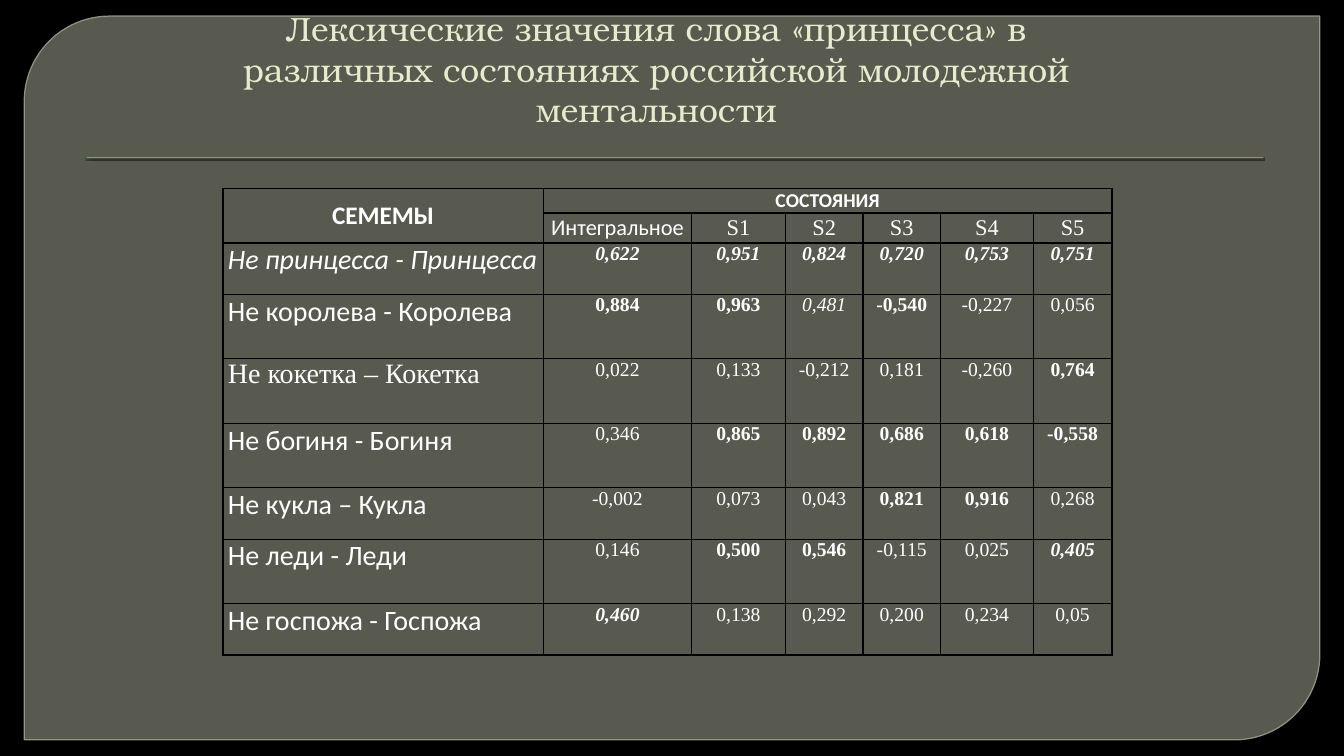
"""Build the slide with the table of meanings of the word «принцесса»."""
from lxml import etree
from pptx import Presentation
from pptx.dml.color import RGBColor
from pptx.enum.shapes import MSO_SHAPE
from pptx.enum.text import MSO_ANCHOR as ANCHOR, PP_ALIGN as ALIGN
from pptx.oxml import parse_xml
from pptx.oxml.ns import nsdecls, qn
from pptx.util import Inches, Pt

TITLE = "Лексические значения слова «принцесса» в различных состояниях российской молодежной ментальности"
CORNER, GROUP = "СЕМЕМЫ", "СОСТОЯНИЯ"
STATES = ["Интегральное", "S1", "S2", "S3", "S4", "S5"]
SANS, SERIF, DISPLAY = "Calibri", "Times New Roman", "TeX Gyre Bonum"
ROWS = [
    ("Не принцесса - Принцесса", dict(italic=True),
     ["0,622 bi", "0,951 bi", "0,824 bi", "0,720 bi", "0,753 bi", "0,751 bi"]),
    ("Не королева - Королева", {},
     ["0,884 b", "0,963 b", "0,481 i", "-0,540 b", "-0,227", "0,056"]),
    ("Не кокетка – Кокетка", dict(font=SERIF),
     ["0,022", "0,133", "-0,212", "0,181", "-0,260", "0,764 b"]),
    ("Не богиня - Богиня", dict(align=ALIGN.JUSTIFY),
     ["0,346", "0,865 b", "0,892 b", "0,686 b", "0,618 b", "-0,558 b"]),
    ("Не кукла – Кукла", dict(align=ALIGN.JUSTIFY),
     ["-0,002", "0,073", "0,043", "0,821 b", "0,916 b", "0,268"]),
    ("Не леди - Леди", dict(align=ALIGN.JUSTIFY),
     ["0,146", "0,500 b", "0,546 b", "-0,115", "0,025", "0,405 bi"]),
    ("Не госпожа - Госпожа", dict(align=ALIGN.JUSTIFY),
     ["0,460 bi", "0,138", "0,292", "0,200", "0,234", "0,05"]),
]
COL_WIDTHS = [3.18, 1.47, 0.93, 0.77, 0.77, 0.92, 0.78]
ROW_HEIGHTS = [0.24, 0.3, 0.51, 0.64, 0.64, 0.64, 0.51, 0.64, 0.51]
COLORS = {"back": "000000", "panel": "888B7B", "edge": "9DA090", "rule": "72A376",
          "title": "E7EACB", "text": "FFFFFF", "grid": "000000"}


def rgb(name):
    return RGBColor.from_string(COLORS[name])


def write(tf, text, size=14, font=SANS, color="text", bold=False, italic=False, align=ALIGN.CENTER):
    p = tf.paragraphs[0]
    p.alignment = align
    r = p.add_run()
    r.text = text
    f = r.font
    f.size, f.name, f.bold, f.italic = Pt(size), font, bold, italic
    f.color.rgb = rgb(color)
    return p


def set_alpha(fill, percent):
    clr = fill._xPr.find(qn("a:solidFill"))[0]
    etree.SubElement(clr, qn("a:alpha")).set("val", str(percent * 1000))


def add_panel(s):
    sp = s.shapes.add_shape(MSO_SHAPE.ROUND_2_DIAG_RECTANGLE,
                            Inches(0.24), Inches(0.16), Inches(12.85), Inches(7.18))
    sp.shadow.inherit = False
    sp.adjustments[0], sp.adjustments[1] = 0.118, 0
    sp.fill.solid()
    sp.fill.fore_color.rgb = rgb("panel")
    set_alpha(sp.fill, 65)
    sp.line.width = Pt(0.87)
    sp.line.color.rgb = rgb("edge")
    set_alpha(sp.line.fill, 88)


def add_rule(s):
    sp = s.shapes.add_shape(MSO_SHAPE.RECTANGLE, Inches(0.86), Inches(1.56), Inches(11.67), Inches(0.01))
    sp.fill.solid()
    sp.fill.fore_color.rgb = rgb("rule")
    sp.line.fill.background()
    sp._element.spPr.append(parse_xml(
        f'<a:effectLst {nsdecls("a")}><a:outerShdw blurRad="{Pt(1)}" dist="{Pt(1)}" dir="5400000">'
        f'<a:srgbClr val="{COLORS["back"]}"><a:alpha val="75000"/></a:srgbClr>'
        '</a:outerShdw></a:effectLst>'))


def add_title(s):
    tf = s.shapes.add_textbox(Inches(1.98), Inches(0.39), Inches(9), Inches(0.94)).text_frame
    tf.word_wrap = True
    tf.vertical_anchor = ANCHOR.BOTTOM
    p = write(tf, TITLE, size=24, font=DISPLAY, color="title")
    pPr = p._p.get_or_add_pPr()
    pPr.set("marL", str(Inches(0.06)))
    pPr.set("indent", "0")


def set_borders(cell, row, col):
    under_group = col > 0
    thick = {
        "L": col == 0,
        "R": col == len(COL_WIDTHS) - 1 or (row == 0 and under_group),
        "T": row == 0 or (row == 1 and under_group),
        "B": row == len(ROW_HEIGHTS) - 1 or (row == 0 and under_group),
    }
    tcPr = cell._tc.get_or_add_tcPr()
    for side, heavy in thick.items():
        tcPr.append(parse_xml(
            f'<a:ln{side} {nsdecls("a")} w="{Pt(1.5 if heavy else 1)}"><a:solidFill>'
            f'<a:srgbClr val="{COLORS["grid"]}"/></a:solidFill><a:prstDash val="solid"/></a:ln{side}>'))


def add_values(s):
    table = s.shapes.add_table(len(ROW_HEIGHTS), len(COL_WIDTHS), Inches(2.21), Inches(1.87),
                               Inches(sum(COL_WIDTHS)), Inches(sum(ROW_HEIGHTS))).table
    table.first_row = table.horz_banding = False
    for column, width in zip(table.columns, COL_WIDTHS):
        column.width = Inches(width)
    for i, height in enumerate(ROW_HEIGHTS):
        table.rows[i].height = Inches(height)
        for j in range(len(COL_WIDTHS)):
            cell = table.cell(i, j)
            cell.margin_left = cell.margin_right = Inches(0.05)
            cell.margin_top = cell.margin_bottom = 0
            cell.vertical_anchor = ANCHOR.MIDDLE if i < 2 else ANCHOR.TOP
            set_borders(cell, i, j)
            cell.fill.background()
    table.cell(0, 0).merge(table.cell(1, 0))
    table.cell(0, 1).merge(table.cell(0, len(STATES)))
    write(table.cell(0, 0).text_frame, CORNER, size=18, bold=True)
    write(table.cell(0, 1).text_frame, GROUP, bold=True)
    for j, state in enumerate(STATES, 1):
        write(table.cell(1, j).text_frame, state, size=16, font=SANS if j == 1 else SERIF)
    for i, (sememe, style, values) in enumerate(ROWS, 2):
        write(table.cell(i, 0).text_frame, sememe, **{"size": 20, "align": ALIGN.LEFT, **style})
        for j, value in enumerate(values, 1):
            number, _, marks = value.partition(" ")
            write(table.cell(i, j).text_frame, number, font=SERIF, bold="b" in marks, italic="i" in marks)


def main():
    prs = Presentation()
    prs.slide_width, prs.slide_height = Inches(13.33), Inches(7.5)
    s = prs.slides.add_slide(prs.slide_layouts[6])
    s.background.fill.solid()
    s.background.fill.fore_color.rgb = rgb("back")
    add_panel(s)
    add_rule(s)
    add_title(s)
    add_values(s)
    prs.save("out.pptx")


if __name__ == "__main__":
    main()
